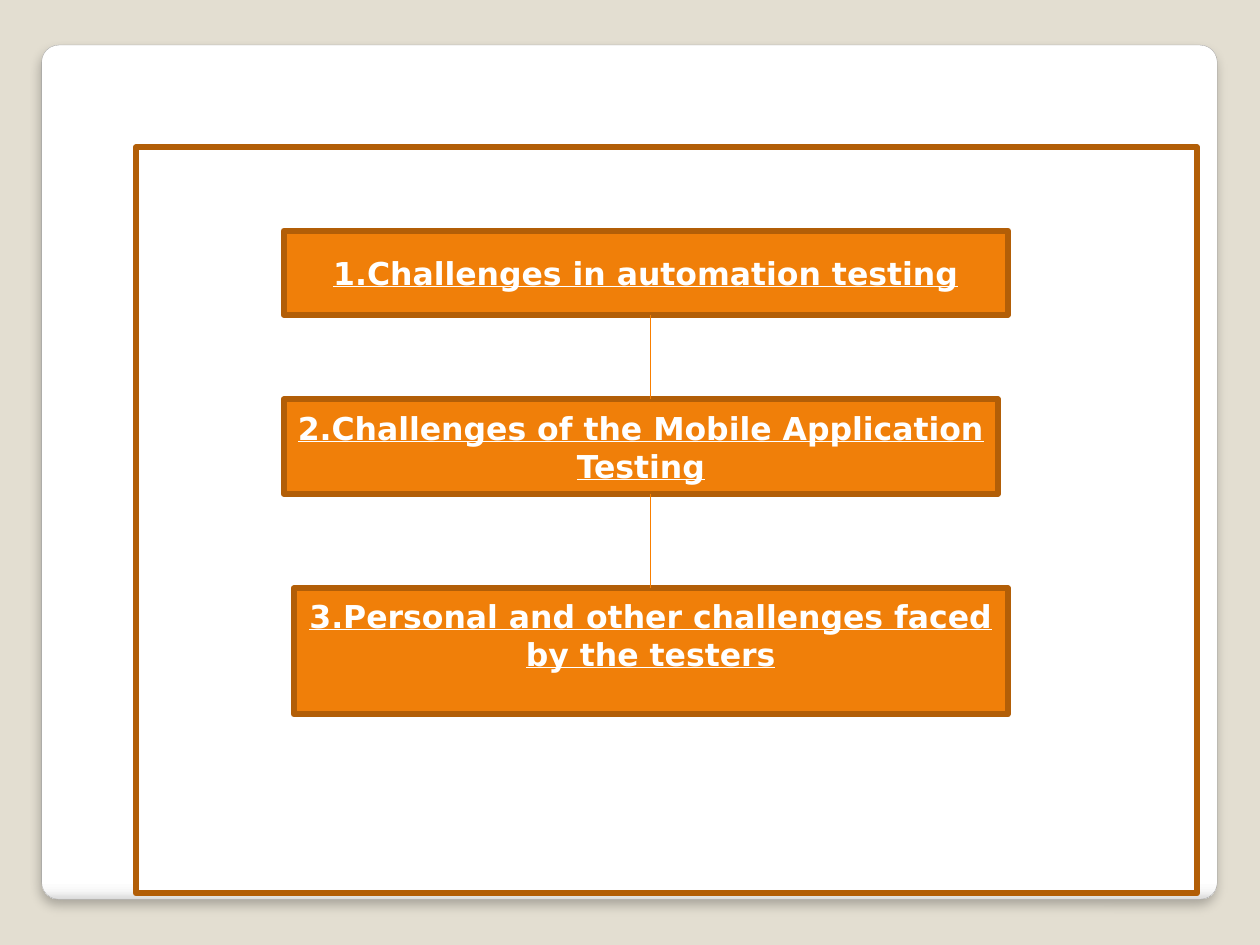
from pptx import Presentation
from pptx.dml.color import RGBColor
from pptx.enum.shapes import MSO_CONNECTOR as CONN, MSO_SHAPE as SHAPE
from pptx.enum.text import MSO_ANCHOR as ANCHOR, PP_ALIGN as ALIGN
from pptx.oxml import parse_xml
from pptx.oxml.ns import nsdecls, qn
from pptx.util import Cm, Pt
from lxml.etree import SubElement


def rgb(value):
    return RGBColor.from_string(value)


class Deck:
    """Holds the style and the current slide, and draws each kind of element."""

    FONT = "DejaVu Sans"
    BACK, WHITE, ORANGE, BROWN = "E3DED1", "FFFFFF", "F07F09", "B25E07"
    LINK, EDGE = "F97F00", "A4A4A4"
    STOPS = ((0, WHITE), (98, WHITE), (99, "F7F7F7"), (100, "DADADA"))

    def __init__(self, prs):
        self.s = prs.slides.add_slide(prs.slide_layouts[6])
        self.s.background.fill.solid()
        self.s.background.fill.fore_color.rgb = rgb(self.BACK)

    def shape(self, kind, at, line, width):
        sp = self.s.shapes.add_shape(kind, *map(Cm, at))
        sp.shadow.inherit = False
        sp.line.color.rgb = rgb(line)
        sp.line.width = Pt(width)
        return sp

    def panel(self, *at):
        sp = self.shape(SHAPE.ROUNDED_RECTANGLE, at, self.EDGE, 0.16)
        sp.adjustments[0] = 0.02
        sp.fill.gradient()
        sp.fill.gradient_angle = 270
        stops = sp._element.spPr.find(".//" + qn("a:gsLst"))
        stops.clear()
        for pos, color in self.STOPS:
            gs = SubElement(stops, qn("a:gs"), pos=str(pos * 1000))
            SubElement(gs, qn("a:srgbClr"), val=color)
        sp._element.spPr.find(qn("a:effectLst")).append(parse_xml(
            f'<a:outerShdw {nsdecls("a")} blurRad="{Pt(6)}" dist="{Pt(4)}" dir="5400000" '
            'algn="t" rotWithShape="0"><a:srgbClr val="000000"><a:alpha val="25000"/>'
            '</a:srgbClr></a:outerShdw>'))

    def box(self, *at, fill=ORANGE, text="", anchor=ANCHOR.MIDDLE):
        sp = self.shape(SHAPE.RECTANGLE, at, self.BROWN, 3.35)
        sp.fill.solid()
        sp.fill.fore_color.rgb = rgb(fill)
        tf = sp.text_frame
        tf.word_wrap = True
        tf.vertical_anchor = anchor
        tf.margin_top = tf.margin_bottom = Cm(0.17)
        p = tf.paragraphs[0]
        p.text = text
        p.alignment = ALIGN.CENTER
        font = p.font
        font.name, font.size = self.FONT, Pt(18)
        font.bold = font.underline = True
        font.color.rgb = rgb(self.WHITE)
        return sp

    def link(self, x, upper, lower):
        line = self.s.shapes.add_connector(
            CONN.STRAIGHT, Cm(x), upper.top + upper.height, Cm(x), lower.top)
        line.line.color.rgb = rgb(self.LINK)
        line.line.width = Pt(0.75)
        SubElement(line._element.spPr, qn("a:effectLst"))
        return line


def main():
    prs = Presentation()
    prs.slide_width, prs.slide_height = Cm(25.4), Cm(19.05)
    deck = Deck(prs)
    deck.panel(0.84, 0.91, 23.7, 17.22)
    deck.box(2.74, 2.97, 21.39, 15.04, fill=deck.WHITE)
    mobile = deck.box(5.72, 8.05, 14.4, 1.91,
                      text="2.Challenges of the Mobile Application Testing")
    automation = deck.box(5.72, 4.65, 14.6, 1.7, text="1.Challenges in automation testing")
    personal = deck.box(5.92, 11.86, 14.4, 2.54, anchor=ANCHOR.TOP,
                        text="3.Personal and other challenges faced by the testers")
    deck.link(13.12, automation, mobile)
    deck.link(13.12, mobile, personal).end_connect(personal, 0)
    prs.save("out.pptx")


if __name__ == "__main__":
    main()
